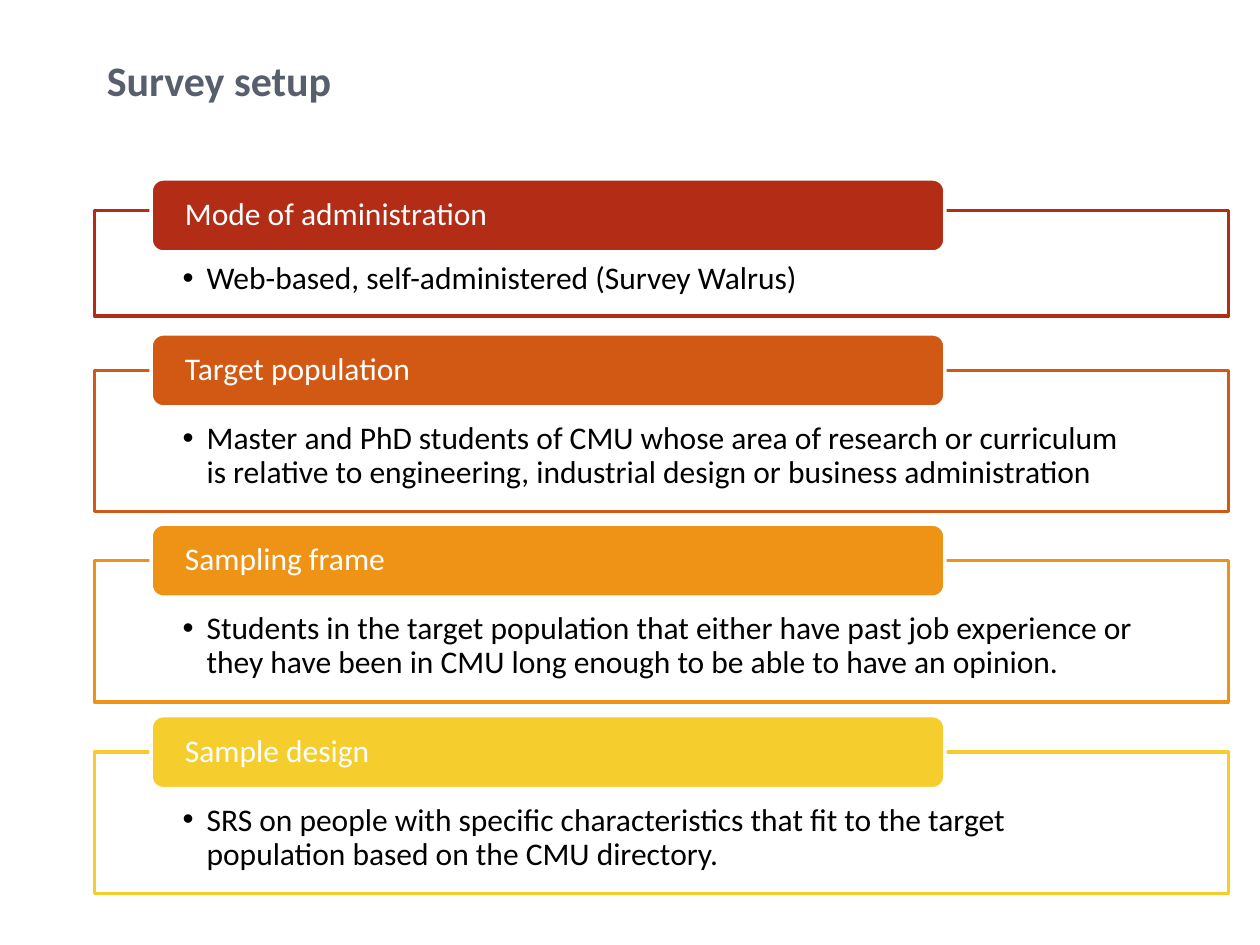
import pptx
import pptx.dml.color
import pptx.enum.shapes
import pptx.enum.text
import pptx.oxml.ns
import pptx.util
from lxml import etree
from pptx.util import Inches

FONT = "Calibri"
WHITE = "FFFFFF"
LEFT, WIDTH = 0.75, 9
TAB_HEIGHT = 0.58

# heading, detail, colour, tab top, panel top, panel height
SECTIONS = [
    ("Mode of administration",
     "Web-based, self-administered (Survey Walrus)",
     "B32C16", 1.42, 1.67, 0.84),
    ("Target population",
     "Master and PhD students of CMU whose area of research or curriculum "
     "is relative to engineering, industrial design or business administration",
     "D25914", 2.65, 2.94, 1.12),
    ("Sampling frame",
     "Students in the target population that either have past job experience or "
     "they have been in CMU long enough to be able to have an opinion.",
     "EE9316", 4.16, 4.45, 1.12),
    ("Sample design",
     "SRS on people with specific characteristics that fit to the target "
     "population based on the CMU directory.",
     "F5CD2D", 5.68, 5.97, 1.12),
]


def rgb(color):
    return pptx.dml.color.RGBColor.from_string(color)


def add_child(parent, tag, **attributes):
    return etree.SubElement(parent, pptx.oxml.ns.qn(tag), attributes)


def add_box(slide, kind, box, fill, line):
    shape = slide.shapes.add_shape(kind, *(Inches(length) for length in box))
    shape.shadow.inherit = False
    shape.fill.solid()
    shape.fill.fore_color.rgb = rgb(fill)
    shape.line.color.rgb = rgb(line)
    shape.line.width = pptx.util.Pt(2)
    return shape


def write_text(shape, text, size, color, margins, anchor, bold=False):
    """Fill the shape with one left-aligned paragraph and return it."""
    frame = shape.text_frame
    frame.word_wrap = True
    frame.vertical_anchor = anchor
    (frame.margin_left, frame.margin_top,
     frame.margin_right, frame.margin_bottom) = (Inches(margin) for margin in margins)
    paragraph = frame.paragraphs[0]
    paragraph.alignment = pptx.enum.text.PP_ALIGN.LEFT
    run = paragraph.add_run()
    run.text = text
    run.font.name = FONT
    run.font.size = pptx.util.Pt(size)
    run.font.bold = bold
    run.font.color.rgb = rgb(color)
    return paragraph


def add_bullet(paragraph, indent):
    properties = paragraph._p.get_or_add_pPr()
    properties.set("marL", str(Inches(indent)))
    properties.set("indent", str(-Inches(indent)))
    add_child(properties, "a:buFont", typeface="Arial")
    add_child(properties, "a:buChar", char="•")


def add_title(slide, text, box):
    title = slide.shapes.add_textbox(*(Inches(length) for length in box))
    write_text(title, text, 24, "575F6D", (0.1, 0.05, 0.1, 0.05),
               pptx.enum.text.MSO_ANCHOR.MIDDLE, bold=True)


def add_panel(slide, text, color, box):
    panel = add_box(slide, pptx.enum.shapes.MSO_SHAPE.RECTANGLE, box, WHITE, color)
    fill_color = panel._element.spPr.find(
        pptx.oxml.ns.qn("a:solidFill")).find(pptx.oxml.ns.qn("a:srgbClr"))
    add_child(fill_color, "a:alpha", val="90000")
    paragraph = write_text(panel, text, 18, "000000", (0.7, 0.41, 0.7, 0.14),
                           pptx.enum.text.MSO_ANCHOR.TOP)
    paragraph.level = 1
    paragraph.line_spacing = 0.9
    add_bullet(paragraph, 0.19)


def add_tab(slide, text, color, box):
    tab = add_box(slide, pptx.enum.shapes.MSO_SHAPE.ROUNDED_RECTANGLE, box, color, WHITE)
    paragraph = write_text(tab, text, 18, WHITE, (0.24, 0, 0.24, 0),
                           pptx.enum.text.MSO_ANCHOR.MIDDLE)
    paragraph.line_spacing = 0.9


def main():
    presentation = pptx.Presentation()
    presentation.slide_width = Inches(10)
    presentation.slide_height = Inches(7.5)
    slide = presentation.slides.add_slide(presentation.slide_layouts[6])

    for heading, detail, color, tab_top, panel_top, panel_height in SECTIONS:
        add_panel(slide, detail, color, (LEFT, panel_top, WIDTH, panel_height))
        add_tab(slide, heading, color,
                (LEFT + 0.05 * WIDTH, tab_top, 0.7 * WIDTH, TAB_HEIGHT))
    add_title(slide, "Survey setup", (LEFT, 0.17, WIDTH, 0.92))

    presentation.save("out.pptx")


if __name__ == "__main__":
    main()
